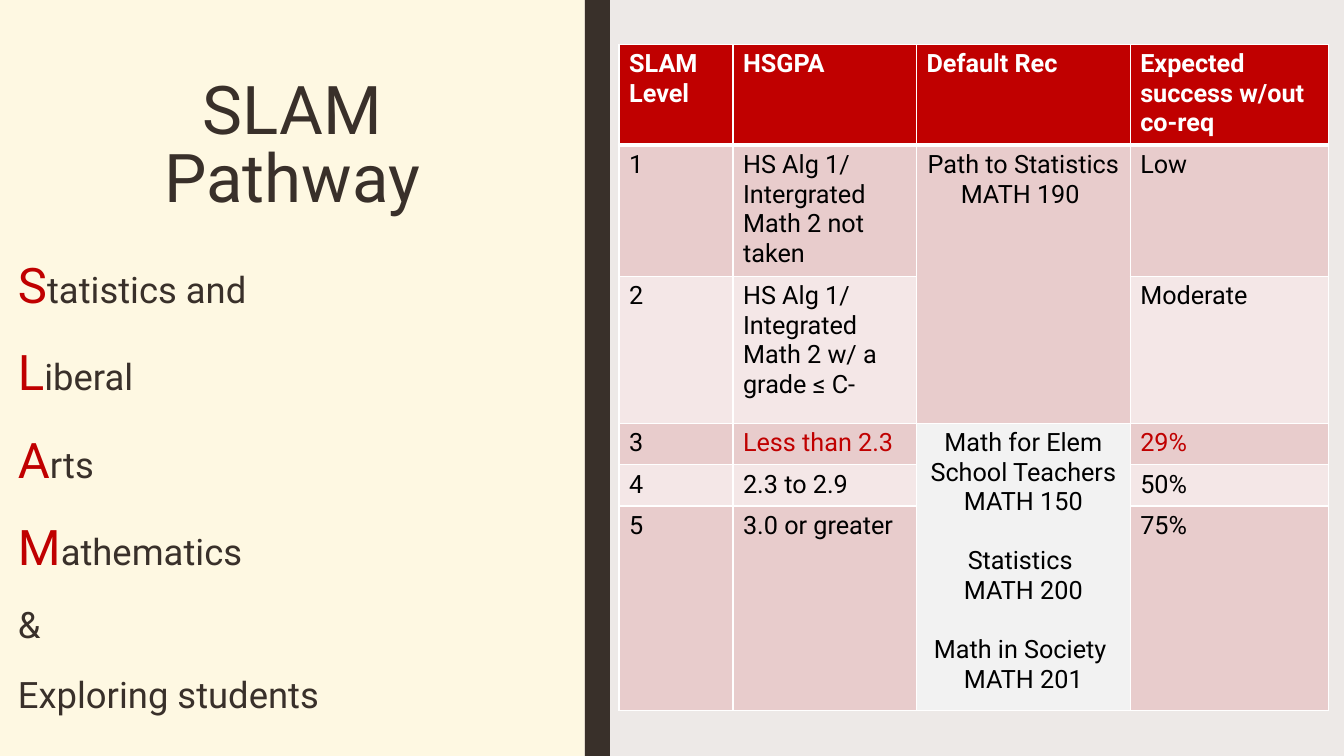
"""Build the SLAM Pathway slide: an acronym panel beside a placement table."""
from dataclasses import dataclass

from lxml import etree
from pptx import Presentation
from pptx import util as u
from pptx.dml.color import RGBColor
from pptx.enum import shapes, text
from pptx.oxml import ns

TITLE = "SLAM Pathway"
ACRONYM = [("S", "tatistics and"), ("L", "iberal"), ("A", "rts"),
           ("M", "athematics"), ("", "&"), ("", "Exploring students")]
HEADINGS = ["SLAM Level", "HSGPA", "Default Rec", "Expected success w/out co-req"]
LEVELS = [
    ("1", "HS Alg 1/ Intergrated Math 2 not taken", "Low"),
    ("2", "HS Alg 1/ Integrated Math 2 w/ a grade ≤ C-", "Moderate"),
    ("3", "Less than 2.3", "29%"),
    ("4", "2.3 to 2.9", "50%"),
    ("5", "3.0 or greater", "75%"),
]
WARNINGS = {"Less than 2.3", "29%"}
COURSES = {
    (1, 2): [["Path to Statistics ", "MATH 190 "]],
    (3, 5): [["Math for Elem School Teachers MATH 150"],
             ["Statistics ", "MATH 200"],
             ["Math in Society ", "MATH 201"]],
}

PX = 9144
SLIDE = (1333, 750)
PANEL = (0, 0, 580, 750)
DIVIDER = (580, 0, 25, 750)
TITLE_BOX = (79, 75, 422, 236)
ACRONYM_BOX = (8, 240, 564, 503)
TABLE_AT = (614, 44)
COLUMNS = [113, 182, 212, 197]
ROWS = [98, 127, 146, 41, 41, 203]
COURSE_COLUMN = 2


@dataclass(frozen=True)
class Theme:
    font: str = "Roboto"
    background: str = "EDE9E7"
    panel: str = "FEF8E2"
    ink: str = "39302A"
    accent: str = "C00000"
    body: str = "000000"
    white: str = "FFFFFF"
    odd: str = "E8CCCC"
    even: str = "F4E7E7"
    upper_courses: str = "F2F2F2"
    title_size: int = 48
    initial_size: int = 35
    word_size: int = 26
    table_size: int = 18
    course_gap: int = 21


THEME = Theme()


def px(lengths):
    return [u.Emu(length * PX) for length in lengths]


def paint(fill, color):
    fill.solid()
    fill.fore_color.rgb = RGBColor.from_string(color)


def write(frame, paragraphs, align=text.PP_ALIGN.LEFT, bold=False,
          spacing=None, after=0, gaps=()):
    """Write paragraphs, each a list of (words, size, color) runs."""
    for index, runs in enumerate(paragraphs):
        paragraph = frame.paragraphs[0] if index == 0 else frame.add_paragraph()
        paragraph.alignment = align
        paragraph.space_after = u.Pt(after)
        paragraph.space_before = u.Pt(THEME.course_gap if index in gaps else 0)
        if spacing:
            paragraph.line_spacing = spacing
        for words, size, color in runs:
            run = paragraph.add_run()
            run.text = words
            run.font.name = THEME.font
            run.font.size = u.Pt(size)
            run.font.bold = bold
            run.font.color.rgb = RGBColor.from_string(color)


def add_block(slide, box, color):
    block = slide.shapes.add_shape(shapes.MSO_SHAPE.RECTANGLE, *px(box))
    block.shadow.inherit = False
    paint(block.fill, color)
    block.line.fill.background()


def add_words(slide, box, paragraphs, **style):
    frame = slide.shapes.add_textbox(*px(box)).text_frame
    frame.word_wrap = True
    write(frame, paragraphs, **style)


def style_cell(cell, row, color):
    """Give a cell its white borders and its fill."""
    properties = cell._tc.get_or_add_tcPr()
    heavy = {0: "lnB", 1: "lnT"}.get(row)
    for side in ("lnL", "lnR", "lnT", "lnB"):
        width = u.Pt(3 if side == heavy else 1)
        line = etree.SubElement(properties, ns.qn(f"a:{side}"), w=str(width))
        solid = etree.SubElement(line, ns.qn("a:solidFill"))
        etree.SubElement(solid, ns.qn("a:srgbClr"), val=THEME.white)
    paint(cell.fill, color)


def add_levels(slide):
    size = px((sum(COLUMNS), sum(ROWS)))
    table = slide.shapes.add_table(len(ROWS), len(COLUMNS), *px(TABLE_AT), *size).table
    for column, width in zip(table.columns, px(COLUMNS)):
        column.width = width
    for row, height in zip(table.rows, px(ROWS)):
        row.height = height

    for column, heading in enumerate(HEADINGS):
        cell = table.cell(0, column)
        style_cell(cell, 0, THEME.accent)
        write(cell.text_frame, [[(heading, THEME.table_size, THEME.white)]], bold=True)

    for row, level in enumerate(LEVELS, 1):
        for column, words in zip((0, 1, 3), level):
            cell = table.cell(row, column)
            style_cell(cell, row, THEME.odd if row % 2 else THEME.even)
            color = THEME.accent if words in WARNINGS else THEME.body
            write(cell.text_frame, [[(words, THEME.table_size, color)]])

    for ((first, last), groups), color in zip(COURSES.items(), (THEME.odd, THEME.upper_courses)):
        for row in range(first, last + 1):
            style_cell(table.cell(row, COURSE_COLUMN), row, color)
        course = table.cell(first, COURSE_COLUMN)
        course.merge(table.cell(last, COURSE_COLUMN))
        lines = [line for group in groups for line in group]
        gaps = [sum(map(len, groups[:index])) for index in range(1, len(groups))]
        write(course.text_frame, [[(line, THEME.table_size, THEME.body)] for line in lines],
              align=text.PP_ALIGN.CENTER, gaps=gaps)


def main():
    deck = Presentation()
    deck.slide_width, deck.slide_height = px(SLIDE)
    slide = deck.slides.add_slide(deck.slide_layouts[6])
    paint(slide.background.fill, THEME.background)
    add_block(slide, PANEL, THEME.panel)
    add_block(slide, DIVIDER, THEME.ink)
    add_words(slide, TITLE_BOX, [[(TITLE, THEME.title_size, THEME.ink)]],
              align=text.PP_ALIGN.CENTER, spacing=0.84)
    add_levels(slide)
    acronym = [[run for run in ((initial, THEME.initial_size, THEME.accent),
                                (rest, THEME.word_size, THEME.ink)) if run[0]]
               for initial, rest in ACRONYM]
    add_words(slide, ACRONYM_BOX, acronym, spacing=1.13, after=15)
    deck.save("out.pptx")


if __name__ == "__main__":
    main()
